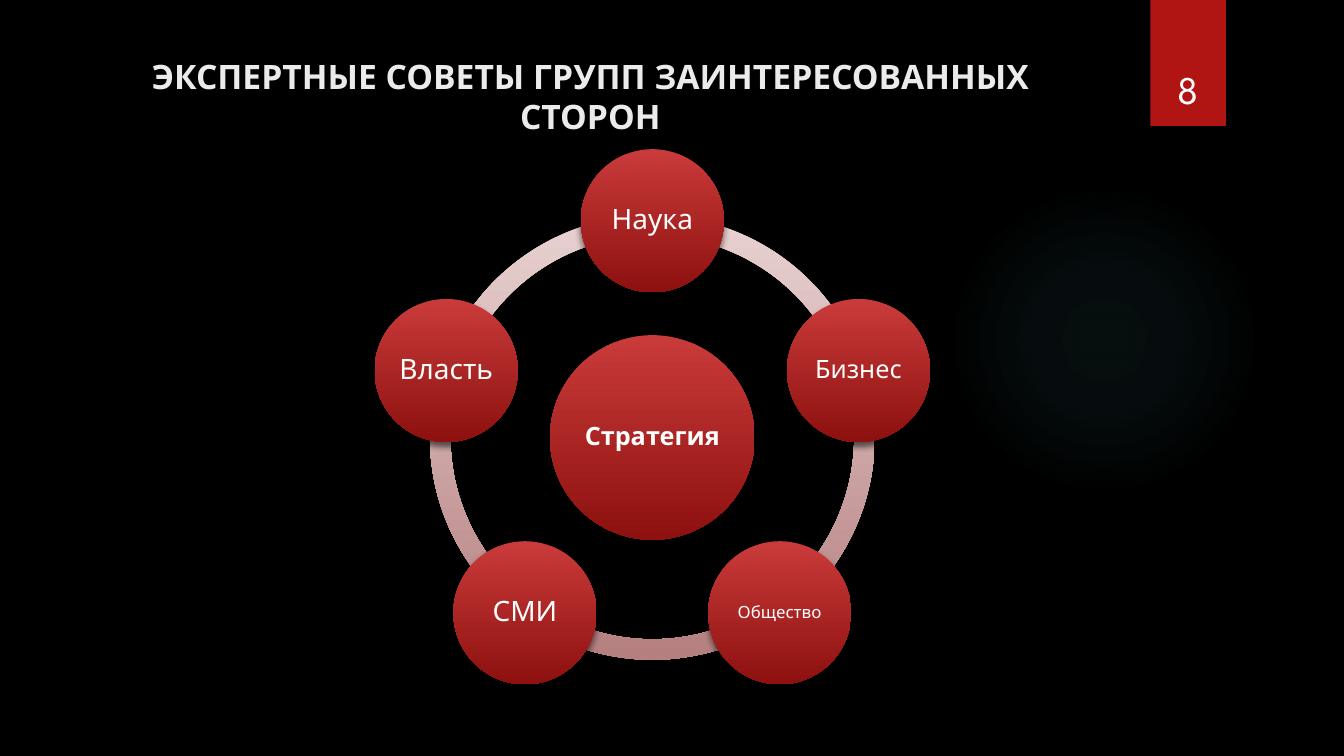
from math import cos, radians, sin

from lxml.etree import SubElement
from pptx import Presentation
from pptx.dml.color import RGBColor
from pptx.enum.shapes import MSO_SHAPE
from pptx.enum.text import MSO_ANCHOR, MSO_AUTO_SIZE, PP_ALIGN
from pptx.oxml import parse_xml
from pptx.oxml.ns import nsdecls, qn
from pptx.util import Inches, Pt

BLACK = RGBColor(0x00, 0x00, 0x00)
WHITE = RGBColor(0xFF, 0xFF, 0xFF)
TITLE_GRAY = RGBColor(0xEB, 0xEB, 0xEB)
TAB_RED = RGBColor(0xB0, 0x15, 0x13)
BALL_TOP = RGBColor(0xC9, 0x3B, 0x3A)
BALL_BOTTOM = RGBColor(0x8D, 0x11, 0x0F)
RING_TOP = RGBColor(0xE8, 0xD2, 0xD1)
RING_BOTTOM = RGBColor(0xB5, 0x7F, 0x7F)
GLOW_TEAL = RGBColor(0x50, 0xB9, 0xC1)

CENTER_X, CENTER_Y = 6.47, 4.34
ORBIT = 2.15
RING_SIZE, HUB_SIZE, BALL_SIZE = 4.41, 2.03, 1.42
COUNCILS = [("Наука", 20), ("Бизнес", 18), ("Общество", 12), ("СМИ", 20), ("Власть", 20)]


class CouncilSlide:
    font_name = "League Spartan"

    def __init__(self, page):
        self.page = page
        page.background.fill.solid()
        page.background.fill.fore_color.rgb = BLACK

    def shape(self, kind, left, top, width, height):
        box = self.page.shapes.add_shape(
            kind, Inches(left), Inches(top), Inches(width), Inches(height))
        box.line.fill.background()
        box.shadow.inherit = False
        return box

    def centered(self, kind, x, y, size):
        return self.shape(kind, x - size / 2, y - size / 2, size, size)

    def cast_shadow(self, box, opacity, blur, distance):
        effects = box.element.spPr.find(qn("a:effectLst"))
        shadow = SubElement(effects, qn("a:outerShdw"), blurRad=str(Pt(blur)),
                            dist=str(Pt(distance)), dir="5400000", rotWithShape="0")
        color = SubElement(shadow, qn("a:srgbClr"), val=str(BLACK))
        SubElement(color, qn("a:alpha"), val=str(opacity * 1000))

    def shade(self, box, top_color, bottom_color):
        box.fill.gradient()
        box.fill.gradient_angle = 270
        for stop, position, color in zip(
                box.fill.gradient_stops, (0, 1), (top_color, bottom_color)):
            stop.position = position
            stop.color.rgb = color
        self.cast_shadow(box, 60, 5, 3)

    def label(self, box, text, size, color=WHITE, bold=False):
        frame = box.text_frame
        frame.text = text
        frame.word_wrap = True
        para = frame.paragraphs[0]
        para.alignment = PP_ALIGN.CENTER
        font = para.runs[0].font
        font.name = self.font_name
        font.size = Pt(size)
        font.bold = bold
        font.color.rgb = color
        return frame

    def glow(self, left, top, size):
        box = self.shape(MSO_SHAPE.OVAL, left, top, size, size)
        stops = "".join(
            f'<a:gs pos="{position}000"><a:srgbClr val="{GLOW_TEAL}">'
            f'<a:alpha val="{opacity}000"/></a:srgbClr></a:gs>'
            for position, opacity in ((0, 7), (36, 6), (69, 0)))
        gradient = parse_xml(
            f'<a:gradFill {nsdecls("a")}><a:gsLst>{stops}</a:gsLst><a:path path="circle">'
            '<a:fillToRect l="50000" t="50000" r="50000" b="50000"/></a:path></a:gradFill>')
        box.element.spPr.find(qn("a:prstGeom")).addnext(gradient)

    def page_tab(self, number):
        tab = self.shape(MSO_SHAPE.RECTANGLE, 11.41, 0, 0.75, 1.25)
        tab.fill.solid()
        tab.fill.fore_color.rgb = TAB_RED
        self.cast_shadow(tab, 45, 3, 2)
        box = self.page.shapes.add_textbox(
            Inches(11.32), Inches(0.32), Inches(0.92), Inches(0.84))
        self.label(box, number, 28).vertical_anchor = MSO_ANCHOR.BOTTOM

    def title(self, text):
        box = self.page.shapes.title
        box.left, box.top = Inches(0.71), Inches(0.5)
        box.width, box.height = Inches(10.29), Inches(0.98)
        frame = self.label(box, text, 24, TITLE_GRAY, True)
        frame.vertical_anchor = MSO_ANCHOR.TOP
        frame.auto_size = MSO_AUTO_SIZE.NONE

    def arc(self, start, end):
        box = self.centered(MSO_SHAPE.BLOCK_ARC, CENTER_X, CENTER_Y, RING_SIZE)
        for index, value in enumerate((start * 0.6, end * 0.6, 0.046)):
            box.adjustments[index] = value
        self.shade(box, RING_TOP, RING_BOTTOM)

    def ball(self, text, x, y, diameter, size, bold=False):
        box = self.centered(MSO_SHAPE.OVAL, x, y, diameter)
        self.shade(box, BALL_TOP, BALL_BOTTOM)
        frame = self.label(box, text, size, bold=bold)
        frame.vertical_anchor = MSO_ANCHOR.MIDDLE
        frame.margin_left = frame.margin_right = Inches(0.03)
        frame.margin_top = frame.margin_bottom = Inches(0.03)
        frame.paragraphs[0].line_spacing = 0.9
        frame.paragraphs[0].space_after = Pt(round(size * 0.35))


def main():
    deck = Presentation()
    deck.slide_width, deck.slide_height = Inches(13.33), Inches(7.5)
    slide = CouncilSlide(deck.slides.add_slide(deck.slide_layouts[5]))
    slide.glow(9.41, 1.83, 3.08)
    slide.page_tab("8")
    slide.title("ЭКСПЕРТНЫЕ СОВЕТЫ ГРУПП ЗАИНТЕРЕСОВАННЫХ СТОРОН")

    step = 360 / len(COUNCILS)
    angles = [(270 + step * index) % 360 for index in range(len(COUNCILS))]
    for angle in reversed(angles):
        slide.arc(angle, (angle + step) % 360)
    slide.ball("Стратегия", CENTER_X, CENTER_Y, HUB_SIZE, 18, True)
    for (name, size), angle in zip(COUNCILS, angles):
        slide.ball(name, CENTER_X + ORBIT * cos(radians(angle)),
                   CENTER_Y + ORBIT * sin(radians(angle)), BALL_SIZE, size)
    deck.save("out.pptx")


if __name__ == "__main__":
    main()
